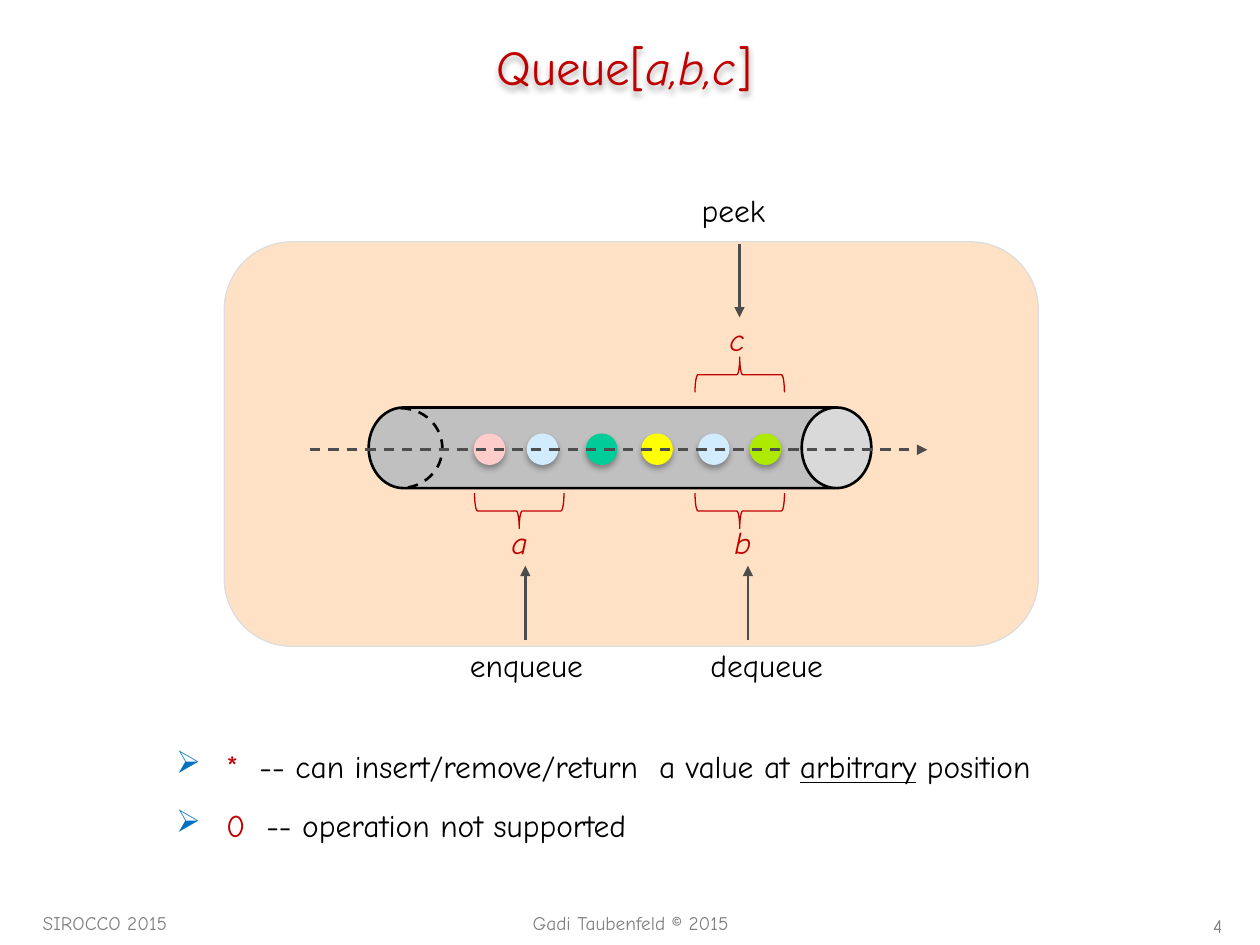
from math import cos, pi, sin

from lxml.etree import SubElement
from pptx import Presentation
from pptx.dml.color import RGBColor
from pptx.enum.dml import MSO_LINE
from pptx.enum.shapes import MSO_CONNECTOR, MSO_SHAPE
from pptx.enum.text import MSO_ANCHOR, PP_ALIGN
from pptx.oxml.ns import qn
from pptx.util import Pt

COLORS = {
    "red": "C00000", "blue": "0070C0", "black": "000000", "footer": "808080",
    "arrow": "4D4D4D", "panel": "FFE2C5", "panel_edge": "DDDDDD", "pipe": "C0C0C0",
    "pink": "FFCCCC", "sky": "D1EBFF", "green": "00CC99", "yellow": "FFFF00",
    "lime": "ADEA00",
}


def color(name):
    return RGBColor.from_string(COLORS[name])


def write_run(paragraph, text, size=18, ink="black", italic=False, underline=False):
    run = paragraph.add_run()
    run.text = text
    font = run.font
    font.name, font.size = "Comic Neue", Pt(size)
    font.italic, font.underline = italic, underline
    font.color.rgb = color(ink)


def add_shadow(effects):
    shadow = SubElement(effects, qn("a:outerShdw"), blurRad=str(Pt(3.5)),
                        dist=str(Pt(2.2)), dir="5400000", rotWithShape="0")
    tint = SubElement(shadow, qn("a:srgbClr"), val=COLORS["black"])
    SubElement(tint, qn("a:alpha"), val="32000")


class QueueSlide:
    """Draws styled elements on one slide, with all lengths in points."""

    def __init__(self, slide):
        self.slide = slide
        self.shapes = slide.shapes

    def text(self, box, *runs, align=PP_ALIGN.LEFT, anchor=MSO_ANCHOR.TOP,
             wrap=True, bullet=None, shadow=False, **style):
        label = self.shapes.add_textbox(*map(Pt, box))
        frame = label.text_frame
        frame.word_wrap, frame.vertical_anchor = wrap, anchor
        paragraph = frame.paragraphs[0]
        paragraph.alignment = align
        for words, changes in runs:
            write_run(paragraph, words, **{**style, **changes})
        if bullet:
            properties = paragraph._p.get_or_add_pPr()
            properties.set("marL", str(Pt(22.5)))
            properties.set("indent", str(-Pt(22.5)))
            bullet_color = SubElement(properties, qn("a:buClr"))
            SubElement(bullet_color, qn("a:srgbClr"), val=COLORS["blue"])
            SubElement(properties, qn("a:buChar"), char=bullet)
        if shadow:
            add_shadow(SubElement(label._element.spPr, qn("a:effectLst")))

    def shape(self, kind, box, fill, edge=None, width=0.75, turn=0, flip=False,
              adjust=None, shadow=False):
        figure = self.shapes.add_shape(kind, *map(Pt, box))
        figure.shadow.inherit = False
        figure.rotation = turn
        figure.fill.solid()
        figure.fill.fore_color.rgb = color(fill)
        if edge:
            figure.line.color.rgb = color(edge)
            figure.line.width = Pt(width)
        else:
            figure.line.fill.background()
        if adjust is not None:
            figure.adjustments[0] = adjust
        if flip:
            figure._element.spPr.xfrm.set("flipV", "1")
        if shadow:
            add_shadow(figure._element.spPr.find(qn("a:effectLst")))

    def arrow(self, start, end, dashed=False):
        connector = self.shapes.add_connector(MSO_CONNECTOR.STRAIGHT,
                                              *map(Pt, (*start, *end)))
        line = connector.line
        line.color.rgb, line.width = color("arrow"), Pt(1.5)
        if dashed:
            line.dash_style = MSO_LINE.DASH
        SubElement(line._get_or_add_ln(), qn("a:tailEnd"), type="triangle")
        SubElement(connector._element.spPr, qn("a:effectLst"))

    def half_ellipse(self, center_x, center_y, radius_x, radius_y, steps=32):
        angles = [pi * step / steps - pi / 2 for step in range(steps + 1)]
        points = [(Pt(center_x + radius_x * cos(angle)),
                   Pt(center_y + radius_y * sin(angle))) for angle in angles]
        builder = self.shapes.build_freeform(*points[0])
        builder.add_line_segments(points[1:], close=False)
        rim = builder.convert_to_shape()
        rim.shadow.inherit = False
        rim.fill.background()
        rim.line.color.rgb, rim.line.width = color("black"), Pt(1.5)
        rim.line.dash_style = MSO_LINE.DASH


def main():
    deck = Presentation()
    deck.slide_width, deck.slide_height = Pt(720), Pt(540)
    page = QueueSlide(deck.slides.add_slide(deck.slide_layouts[6]))

    page.text((19.4, 15.1, 684, 45.4), ("Queue[", {}), ("a,b,c", {"italic": True}),
              ("] ", {}), size=28, ink="red", align=PP_ALIGN.CENTER,
              anchor=MSO_ANCHOR.MIDDLE, shadow=True)

    page.shape(MSO_SHAPE.ROUNDED_RECTANGLE, (128.2, 138.2, 465.1, 231.1), "panel",
               "panel_edge", adjust=0.167)
    page.shape(MSO_SHAPE.CAN, (331.2, 112.3, 46.1, 287.3), "pipe", "black", 1.5,
               turn=270, flip=True, adjust=0.864)
    items = [(270.7, "pink"), (301, "sky"), (334.8, "green"),
             (366.5, "yellow"), (398.9, "sky"), (428.4, "lime")]
    for left, fill in items:
        page.shape(MSO_SHAPE.OVAL, (left, 247.7, 18, 18), fill, shadow=True)
    page.half_ellipse(229, 256.1, 23.8, 22.8)
    page.arrow((177.1, 257), (529.9, 257), dashed=True)

    operations = [
        ("enqueue", (261.4, 365.8, 81.4, 28.8), (300.2, 365.8), (300.2, 323.3)),
        ("dequeue", (398.9, 365.8, 82.8, 28.8), (427.4, 365.8), (427.4, 323.3)),
        ("peek", (393.8, 105.8, 54, 28.8), (422.6, 139.7), (422.6, 181.4)),
    ]
    for operation, box, start, end in operations:
        page.text(box, (operation, {}), wrap=False)
        page.arrow(start, end)

    windows = [
        ("a", (285.1, 295.2, 23.8, 28.8), (286.6, 266.4), 270),
        ("b", (412.6, 295.2, 25.2, 28.8), (412.6, 266.4), 270),
        ("c", (409.7, 179.3, 23.8, 28.8), (412.6, 188.6), 90),
    ]
    for parameter, box, corner, turn in windows:
        page.shape(MSO_SHAPE.LEFT_BRACE, (*corner, 20.2, 51.1), "panel", "red", turn=turn)
        page.text(box, (parameter, {}), ink="red", italic=True, wrap=False)

    legend = [
        ((93.6, 423.4, 561.6, 51.1), "*  ",
         [("-- can insert/remove/return  a value at ", {}),
          ("arbitrary", {"underline": True}), (" position", {})]),
        ((93.6, 457.2, 411.8, 28.8), "0  ", [("-- operation not supported", {})]),
    ]
    for box, symbol, meaning in legend:
        page.text(box, (" ", {"ink": "blue"}), (symbol, {"ink": "red"}), *meaning,
                  bullet="➢")

    footers = [
        ("SIROCCO 2015", (17.3, 517, 149.8, 19.4), PP_ALIGN.LEFT),
        ("Gadi Taubenfeld © 2015", (286.6, 517, 147.6, 19.4), PP_ALIGN.CENTER),
        ("4", (671.8, 519.1, 33.8, 20.9), PP_ALIGN.RIGHT),
    ]
    for words, box, align in footers:
        page.text(box, (words, {}), size=11, ink="footer", align=align)

    deck.save("out.pptx")


if __name__ == "__main__":
    main()
